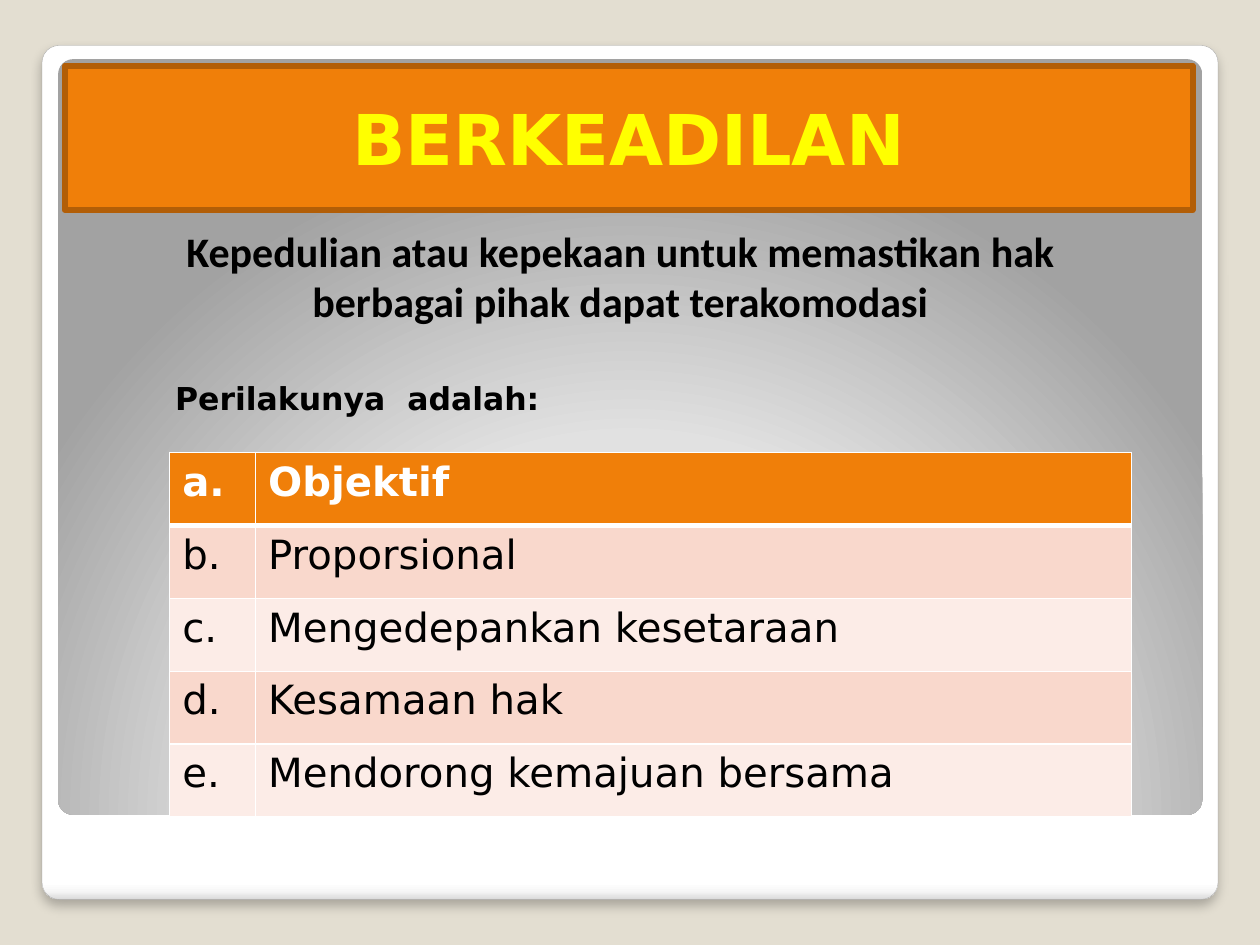
from lxml.etree import SubElement
from pptx import Presentation
from pptx.dml.color import RGBColor
from pptx.enum.shapes import MSO_SHAPE as Shape
from pptx.enum.text import MSO_ANCHOR as Anchor, MSO_AUTO_SIZE as AutoSize, PP_ALIGN as Align
from pptx.oxml import parse_xml
from pptx.oxml.ns import nsdecls, qn
from pptx.util import Pt

COLORS = {
    "backdrop": "E3DED1", "edge": "A4A4A4", "orange": "F07F09", "brown": "B25E07",
    "yellow": "FFFF00", "white": "FFFFFF", "black": "000000",
    "band_dark": "F9D8CC", "band_light": "FCECE7",
}
FRAME_STOPS = [(0, "FFFFFF"), (98, "FFFFFF"), (99, "F7F7F7"), (100, "DADADA")]
PANEL_STOPS = [(0, "FFFFFF"), (55, "E1E1E1"), (100, "A2A2A2")]
LINEAR = '<a:lin ang="5400000" scaled="0"/>'
RADIAL = '<a:path path="circle"><a:fillToRect l="50000" t="175000" r="50000" b="-75000"/></a:path>'
BEHAVIOURS = ["Objektif", "Proporsional", "Mengedepankan kesetaraan",
              "Kesamaan hak", "Mendorong kemajuan bersama"]


def rgb(name):
    """Return the named colour."""
    return RGBColor.from_string(COLORS[name])


def write(frame, text, size, color="black", font="DejaVu Sans", bold=True,
          align=Align.LEFT, anchor=Anchor.TOP):
    """Write one formatted paragraph into a text frame."""
    frame.word_wrap = True
    frame.vertical_anchor = anchor
    paragraph = frame.paragraphs[0]
    paragraph.alignment = align
    run = paragraph.add_run()
    run.text = text
    run.font.size = Pt(size)
    run.font.name = font
    run.font.bold = bold
    run.font.color.rgb = rgb(color)


def add_box(slide, box, kind):
    """Add a preset shape without a shadow."""
    shape = slide.shapes.add_shape(kind, *map(Pt, box))
    shape.shadow.inherit = False
    return shape


def add_gradient_box(slide, box, stops, direction):
    """Add a slightly rounded box with a gradient fill and no line."""
    shape = add_box(slide, box, Shape.ROUNDED_RECTANGLE)
    shape.adjustments[0] = 0.02
    shape.line.fill.background()
    stop_xml = "".join(f'<a:gs pos="{position * 1000}"><a:srgbClr val="{color}"/></a:gs>'
                       for position, color in stops)
    geometry = shape._element.spPr.find(qn("a:prstGeom"))
    geometry.addnext(parse_xml(f'<a:gradFill {nsdecls("a")} rotWithShape="1">'
                               f'<a:gsLst>{stop_xml}</a:gsLst>{direction}</a:gradFill>'))
    return shape


def add_backdrop(slide, box):
    """Draw the white frame and the grey panel inside it."""
    left, top, width, height = box
    frame = add_gradient_box(slide, box, FRAME_STOPS, LINEAR)
    frame.line.color.rgb = rgb("edge")
    frame.line.width = Pt(0.16)
    effects = frame._element.spPr.find(qn("a:effectLst"))
    effects.append(parse_xml(
        f'<a:outerShdw {nsdecls("a")} blurRad="{Pt(6)}" dist="{Pt(4)}" dir="5400000" '
        f'algn="t" rotWithShape="0"><a:srgbClr val="{COLORS["black"]}">'
        '<a:alpha val="25000"/></a:srgbClr></a:outerShdw>'))
    panel = (left + 9.2, top + 7.8, width - 18.2, height - 56.2)
    add_gradient_box(slide, panel, PANEL_STOPS, RADIAL)


def add_banner(slide, box):
    """Draw the orange banner with the topic."""
    banner = add_box(slide, box, Shape.RECTANGLE)
    banner.fill.solid()
    banner.fill.fore_color.rgb = rgb("orange")
    banner.line.color.rgb = rgb("brown")
    banner.line.width = Pt(3.35)
    write(banner.text_frame, "BERKEADILAN", size=40, color="yellow",
          align=Align.CENTER, anchor=Anchor.MIDDLE)


def add_definition(slide, box):
    """Place the title placeholder in front of the panel."""
    title = slide.shapes.title
    title.left, title.top, title.width, title.height = map(Pt, box)
    slide.shapes._spTree.append(title._element)
    title.text_frame.auto_size = AutoSize.NONE
    write(title.text_frame, "Kepedulian atau kepekaan untuk memastikan hak berbagai pihak "
          "dapat terakomodasi", size=24, font="Calibri", align=Align.CENTER, anchor=Anchor.BOTTOM)


def add_lead_in(slide, box):
    """Add the line that introduces the table."""
    text_box = slide.shapes.add_textbox(*map(Pt, box))
    write(text_box.text_frame, "Perilakunya  adalah:", size=18)


def set_borders(cell, top, bottom):
    """Give a cell white borders with the given top and bottom widths."""
    properties = cell._tc.get_or_add_tcPr()
    for index, (side, width) in enumerate(zip("LRTB", (1, 1, top, bottom))):
        line = parse_xml(f'<a:ln{side} {nsdecls("a")} w="{Pt(width)}"/>')
        fill = SubElement(line, qn("a:solidFill"))
        SubElement(fill, qn("a:srgbClr")).set("val", COLORS["white"])
        properties.insert(index, line)


def add_behaviours(slide, box):
    """Add the lettered table of behaviours."""
    left, top, width, height = box
    rows = len(BEHAVIOURS)
    table = slide.shapes.add_table(rows, 2, *map(Pt, box)).table
    letter_width = 49
    table.columns[0].width = Pt(letter_width)
    table.columns[1].width = Pt(width - letter_width)
    for row, (letter, behaviour) in enumerate(zip("abcde", BEHAVIOURS)):
        table.rows[row].height = Pt(height / rows)
        header = row == 0
        band = "orange" if header else ("band_light", "band_dark")[row % 2]
        for column, text in enumerate((f"{letter}.", behaviour)):
            cell = table.cell(row, column)
            cell.fill.solid()
            cell.fill.fore_color.rgb = rgb(band)
            set_borders(cell, top=3 if row == 1 else 1, bottom=3 if header else 1)
            write(cell.text_frame, text, size=23, bold=header,
                  color="white" if header else "black")


def main():
    """Build and save the slide."""
    presentation = Presentation()
    presentation.slide_width, presentation.slide_height = Pt(720), Pt(540)
    slide = presentation.slides.add_slide(presentation.slide_layouts[5])
    slide.background.fill.solid()
    slide.background.fill.fore_color.rgb = rgb("backdrop")
    add_backdrop(slide, (24, 26, 672, 488))
    add_behaviours(slide, (97, 258.5, 549.5, 208.5))
    add_banner(slide, (37, 37.5, 644.5, 82.5))
    add_definition(slide, (59.5, 124.5, 590, 65.5))
    add_lead_in(slide, (93, 213, 227.5, 29))
    presentation.save("out.pptx")


if __name__ == "__main__":
    main()
